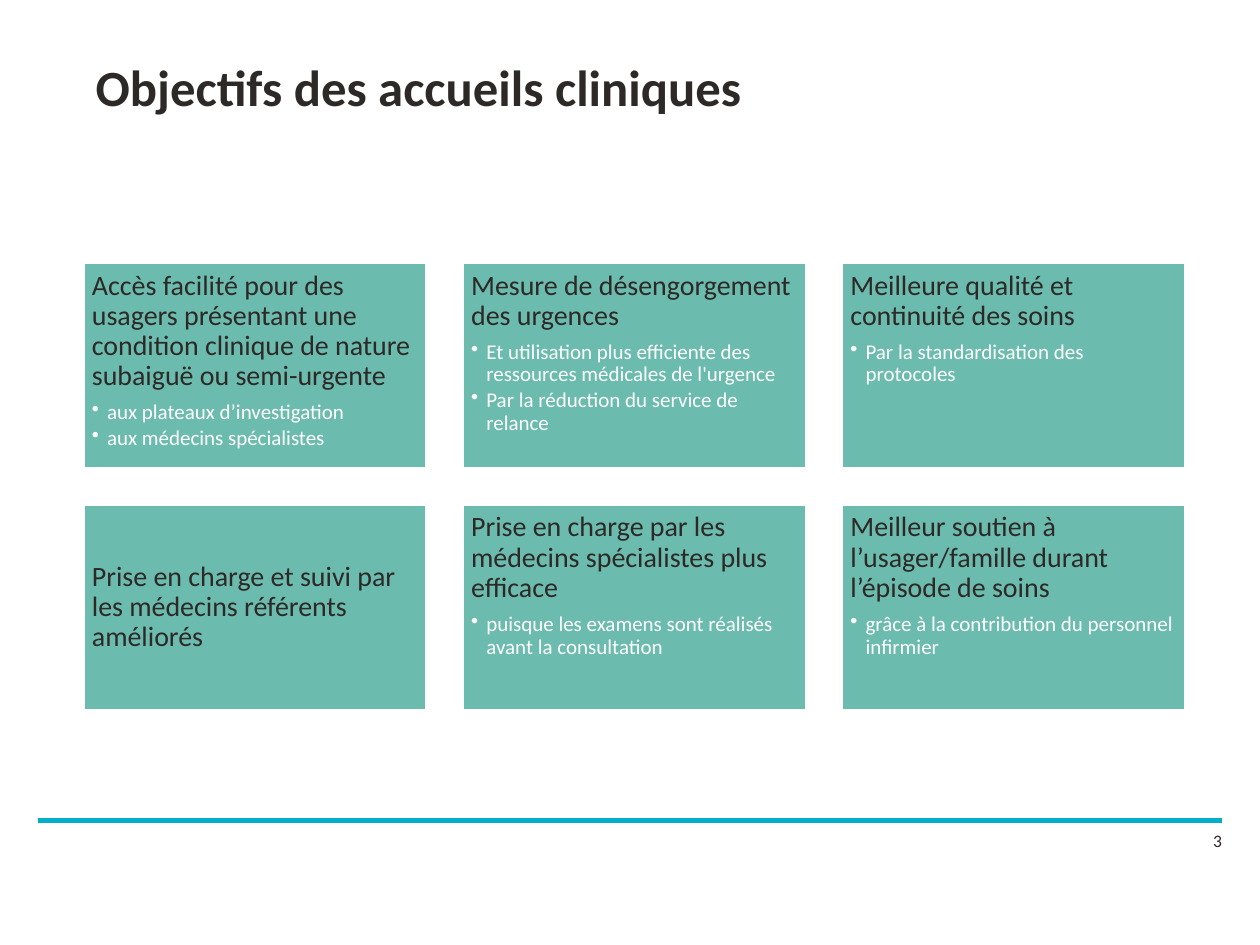
from dataclasses import dataclass

from lxml import etree
from pptx import Presentation
from pptx.dml.color import RGBColor
from pptx.enum.shapes import MSO_CONNECTOR, MSO_SHAPE
from pptx.enum.text import MSO_ANCHOR, PP_ALIGN
from pptx.oxml.ns import qn
from pptx.util import Inches, Pt

RECTANGLE = MSO_SHAPE.RECTANGLE
STRAIGHT = MSO_CONNECTOR.STRAIGHT
TOP, MIDDLE = MSO_ANCHOR.TOP, MSO_ANCHOR.MIDDLE
LEFT = PP_ALIGN.LEFT


@dataclass(frozen=True)
class Theme:
    font: str = "Calibri"
    ink: RGBColor = RGBColor(0x2D, 0x29, 0x26)
    white: RGBColor = RGBColor(0xFF, 0xFF, 0xFF)
    card: RGBColor = RGBColor(0x6B, 0xBB, 0xAE)
    rule: RGBColor = RGBColor(0x00, 0xAE, 0xC7)
    title_size: float = 29
    heading_size: float = 16
    bullet_size: float = 12
    number_size: float = 10


@dataclass(frozen=True)
class Grid:
    """Card grid in inches: origin, card size and distance between cards."""
    left: float = 0.66
    top: float = 2.08
    width: float = 2.73
    height: float = 1.64
    column_step: float = 3.01
    row_step: float = 1.92

    def cell(self, column, row):
        return (self.left + column * self.column_step,
                self.top + row * self.row_step, self.width, self.height)


CARDS = [
    ("Accès facilité pour des usagers présentant une condition clinique "
     "de nature subaiguë ou semi-urgente",
     ["aux plateaux d’investigation", "aux médecins spécialistes"]),
    ("Mesure de désengorgement des urgences",
     ["Et utilisation plus efficiente des ressources médicales de l'urgence",
      "Par la réduction du service de relance"]),
    ("Meilleure qualité et continuité des soins",
     ["Par la standardisation des protocoles"]),
    ("Prise en charge et suivi par les médecins référents améliorés", []),
    ("Prise en charge par les médecins spécialistes plus efficace",
     ["puisque les examens sont réalisés avant la consultation"]),
    ("Meilleur soutien à l’usager/famille durant l’épisode de soins",
     ["grâce à la contribution du personnel infirmier"]),
]
COLUMNS = 3


class SlideBuilder:
    def __init__(self, page, theme, grid):
        self.page, self.theme, self.grid = page, theme, grid

    def fill_para(self, para, text, size, color, bold=False, **spacing):
        span = para.add_run()
        span.text = text
        font_format = {"name": self.theme.font, "size": Pt(size), "bold": bold}
        for name, value in font_format.items():
            setattr(span.font, name, value)
        span.font.color.rgb = color
        for name, value in {"alignment": LEFT, **spacing}.items():
            setattr(para, name, value)

    def text(self, place, text, size, anchor=TOP, bold=False):
        box = self.page.shapes.add_textbox(*map(Inches, place))
        box.text_frame.word_wrap = True
        box.text_frame.vertical_anchor = anchor
        self.fill_para(box.text_frame.paragraphs[0], text, size,
                       self.theme.ink, bold)

    def rule(self, start, end, width):
        line = self.page.shapes.add_connector(STRAIGHT, *map(Inches, start + end))
        line.line.color.rgb = self.theme.rule
        line.line.width = Pt(width)
        etree.SubElement(line._element.spPr, qn("a:effectLst"))

    def bullet(self, para):
        """Give the paragraph a round bullet with a hanging indent."""
        properties = para._p.get_or_add_pPr()
        properties.set("marL", str(Inches(0.12)))
        properties.set("indent", str(Inches(-0.12)))
        etree.SubElement(properties, qn("a:buChar"), char="•")

    def card(self, column, row, heading, bullets):
        theme = self.theme
        place = map(Inches, self.grid.cell(column, row))
        card = self.page.shapes.add_shape(RECTANGLE, *place)
        card.shadow.inherit = False
        card.fill.solid()
        card.fill.fore_color.rgb = theme.card
        card.line.color.rgb = theme.white
        card.line.width = Pt(2)

        frame = card.text_frame
        frame_format = {"word_wrap": True,
                        "vertical_anchor": TOP if bullets else MIDDLE}
        for side in ("left", "top", "right", "bottom"):
            frame_format[f"margin_{side}"] = Inches(0.07)
        for name, value in frame_format.items():
            setattr(frame, name, value)

        self.fill_para(frame.paragraphs[0], heading, theme.heading_size,
                       theme.ink, line_spacing=0.9, space_after=Pt(5.6))
        for text in bullets:
            para = frame.add_paragraph()
            self.bullet(para)
            self.fill_para(para, text, theme.bullet_size, theme.white,
                           line_spacing=0.9, space_after=Pt(1.8))


def main():
    deck = Presentation()
    deck.slide_width, deck.slide_height = Inches(10), Inches(7.5)
    page = deck.slides.add_slide(deck.slide_layouts[6])
    theme = Theme()
    slide = SlideBuilder(page, theme, Grid())

    slide.text((9.53, 6.54, 0.47, 0.4), "3", theme.number_size)
    slide.rule((0.3, 6.51), (9.7, 6.51), 3)
    slide.text((0.66, 0.3, 8.75, 0.77), "Objectifs des accueils cliniques",
               theme.title_size, MIDDLE, bold=True)
    for index, (heading, bullets) in enumerate(CARDS):
        row, column = divmod(index, COLUMNS)
        slide.card(column, row, heading, bullets)

    deck.save("out.pptx")


if __name__ == "__main__":
    main()
